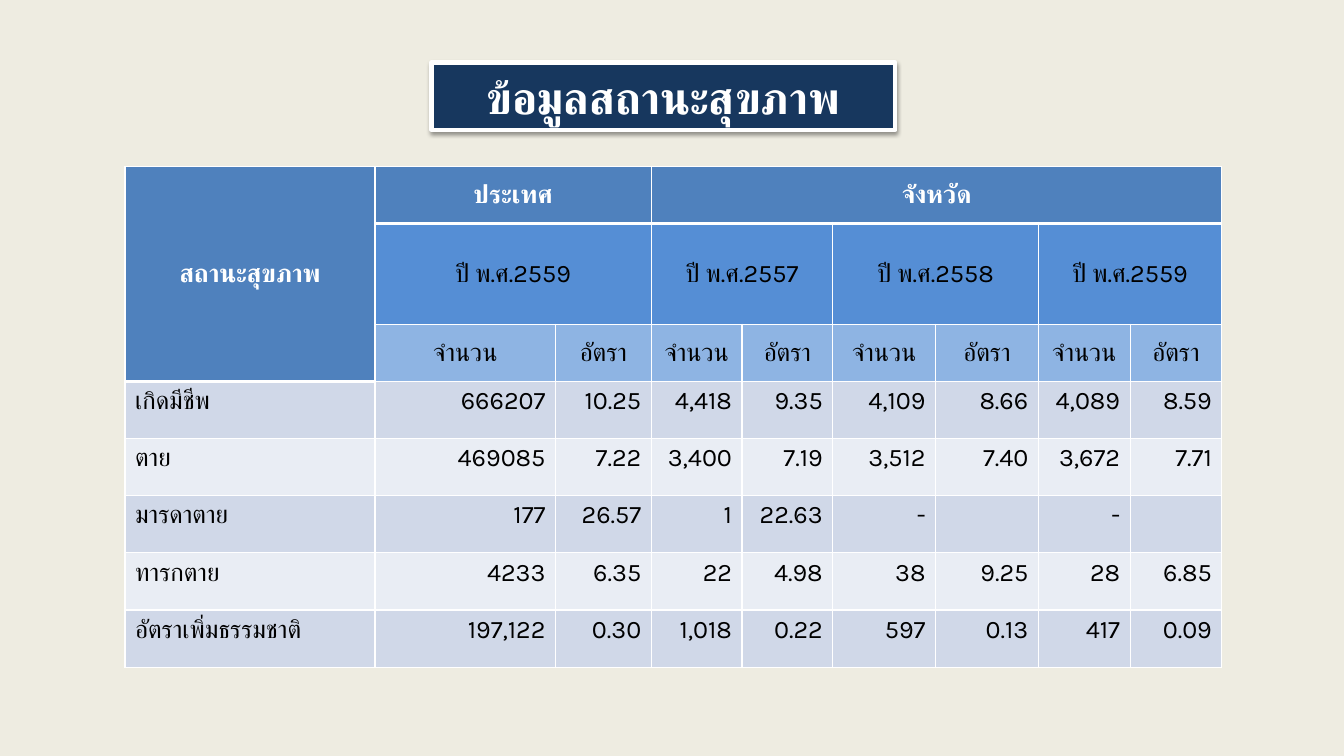
from lxml import etree
from pptx import Presentation
from pptx.dml.color import RGBColor
from pptx.enum.text import MSO_ANCHOR, PP_ALIGN
from pptx.oxml.ns import qn
from pptx.util import Inches, Pt

LEFT, CENTER, RIGHT = PP_ALIGN.LEFT, PP_ALIGN.CENTER, PP_ALIGN.RIGHT
TOP, MIDDLE = MSO_ANCHOR.TOP, MSO_ANCHOR.MIDDLE
TITLE_ONLY = 5
FONT = "Karla"
WHITE, BLACK, CREAM, NAVY = "FFFFFF", "000000", "EEECE1", "17375E"
HEADER, YEAR, MEASURE = "4F81BD", "558ED5", "8EB4E3"
BANDS = ("D0D8E8", "E9EDF4")
THIN, THICK = 1, 3

TABLE_LEFT, TABLE_TOP, TABLE_HEIGHT = 1.24, 1.65, 4.97
COLUMN_WIDTHS = (2.48, 1.79, 0.95, 0.9, 0.9, 1.02, 1.02, 0.91, 0.91)
YEAR_ROW_HEIGHT = 1
YEARS = ("ปี พ.ศ.2559", "ปี พ.ศ.2557", "ปี พ.ศ.2558", "ปี พ.ศ.2559")
MEASURES = ("จำนวน", "อัตรา")
HEADER_ROWS = 3
STATISTICS = (
    ("เกิดมีชีพ", "666207", "10.25", "4,418", "9.35", "4,109", "8.66", "4,089", "8.59"),
    ("ตาย", "469085", "7.22", "3,400", "7.19", "3,512", "7.40", "3,672", "7.71"),
    ("มารดาตาย", "177", "26.57", "1", "22.63", "-", "", "-", ""),
    ("ทารกตาย", "4233", "6.35", "22", "4.98", "38", "9.25", "28", "6.85"),
    ("อัตราเพิ่มธรรมชาติ", "197,122", "0.30", "1,018", "0.22", "597", "0.13", "417", "0.09"),
)


def color(value):
    return RGBColor.from_string(value)


def add_solid_fill(parent, value):
    """Append a solid fill to an XML element and return its colour element."""
    fill = etree.SubElement(parent, qn("a:solidFill"))
    return etree.SubElement(fill, qn("a:srgbClr"), val=value)


def write(text_frame, text, size, text_color, bold, alignment):
    paragraph = text_frame.paragraphs[0]
    paragraph.alignment = alignment
    if not text:
        return
    run = paragraph.add_run()
    run.text = text
    font = run.font
    font.size, font.bold, font.name = Pt(size), bold, FONT
    font.color.rgb = color(text_color)
    # Thai letters take the complex-script typeface.
    etree.SubElement(run._r.get_or_add_rPr(), qn("a:cs"), typeface=FONT)


def add_shadow(shape):
    shape.shadow.inherit = False
    effects = shape._element.spPr.find(qn("a:effectLst"))
    shadow = etree.SubElement(
        effects, qn("a:outerShdw"), blurRad=str(Pt(3.1)), dist=str(Pt(1.6)),
        dir=str(90 * 60000), algn="t", rotWithShape="0")
    shade = etree.SubElement(shadow, qn("a:srgbClr"), val=BLACK)
    etree.SubElement(shade, qn("a:alpha"), val="38000")


def add_title(slide, text):
    title = slide.shapes.title
    title.left, title.top = Inches(4.28), Inches(0.62)
    title.width, title.height = Inches(4.6), Inches(0.67)
    title.fill.solid()
    title.fill.fore_color.rgb = color(NAVY)
    title.line.color.rgb = color(WHITE)
    title.line.width = Pt(THICK)
    add_shadow(title)
    frame = title.text_frame
    frame.word_wrap = True
    frame.vertical_anchor = MIDDLE
    frame.margin_left = frame.margin_right = Inches(0.13)
    frame.margin_top = frame.margin_bottom = Inches(0.07)
    write(frame, text, 32, WHITE, True, CENTER)


def set_borders(cell, top, bottom):
    properties = cell._tc.get_or_add_tcPr()
    for side, width in (("L", THIN), ("R", THIN), ("T", top), ("B", bottom)):
        line = etree.SubElement(properties, qn("a:ln" + side), w=str(Pt(width)))
        add_solid_fill(line, WHITE)


def format_cell(cell, fill, top=THIN, bottom=THIN):
    set_borders(cell, top, bottom)
    cell.fill.solid()
    cell.fill.fore_color.rgb = color(fill)


def fill_cell(cell, text, alignment=CENTER, anchor=MIDDLE, text_color=BLACK, bold=False):
    cell.vertical_anchor = anchor
    write(cell.text_frame, text, 18, text_color, bold, alignment)


def add_table(slide):
    row_count = HEADER_ROWS + len(STATISTICS)
    table = slide.shapes.add_table(
        row_count, len(COLUMN_WIDTHS), Inches(TABLE_LEFT), Inches(TABLE_TOP),
        Inches(sum(COLUMN_WIDTHS)), Inches(TABLE_HEIGHT)).table
    for column, width in zip(table.columns, COLUMN_WIDTHS):
        column.width = Inches(width)
    for index, row in enumerate(table.rows):
        plain_height = (TABLE_HEIGHT - YEAR_ROW_HEIGHT) / (row_count - 1)
        row.height = Inches(YEAR_ROW_HEIGHT if index == 1 else plain_height)
    return table


def format_grid(table):
    fills = [HEADER, YEAR, MEASURE]
    fills += [BANDS[index % 2] for index in range(len(STATISTICS))]
    for row, fill in enumerate(fills):
        for column in range(len(COLUMN_WIDTHS)):
            is_corner = column == 0 and row < HEADER_ROWS
            thick_row = HEADER_ROWS if column == 0 else 1
            format_cell(
                table.cell(row, column), HEADER if is_corner else fill,
                THICK if row == thick_row else THIN,
                THICK if is_corner or row == thick_row - 1 else THIN)


def fill_headers(table):
    groups = (("สถานะสุขภาพ", 0, 2, 0), ("ประเทศ", 1, 0, 2), ("จังหวัด", 3, 0, 8))
    for text, column, last_row, last_column in groups:
        table.cell(0, column).merge(table.cell(last_row, last_column))
        fill_cell(table.cell(0, column), text, text_color=WHITE, bold=True)
    for index, year in enumerate(YEARS):
        first = 1 + index * len(MEASURES)
        table.cell(1, first).merge(table.cell(1, first + 1))
        fill_cell(table.cell(1, first), year)
        for offset, measure in enumerate(MEASURES):
            fill_cell(table.cell(2, first + offset), measure)


def fill_statistics(table):
    for row, values in enumerate(STATISTICS, HEADER_ROWS):
        for column, value in enumerate(values):
            fill_cell(table.cell(row, column), value, RIGHT if column else LEFT, TOP)


def main():
    presentation = Presentation()
    presentation.slide_width, presentation.slide_height = Inches(13.33), Inches(7.5)
    slide = presentation.slides.add_slide(presentation.slide_layouts[TITLE_ONLY])
    slide.background.fill.solid()
    slide.background.fill.fore_color.rgb = color(CREAM)
    add_title(slide, "ข้อมูลสถานะสุขภาพ")
    table = add_table(slide)
    format_grid(table)
    fill_headers(table)
    fill_statistics(table)
    presentation.save("out.pptx")


if __name__ == "__main__":
    main()
